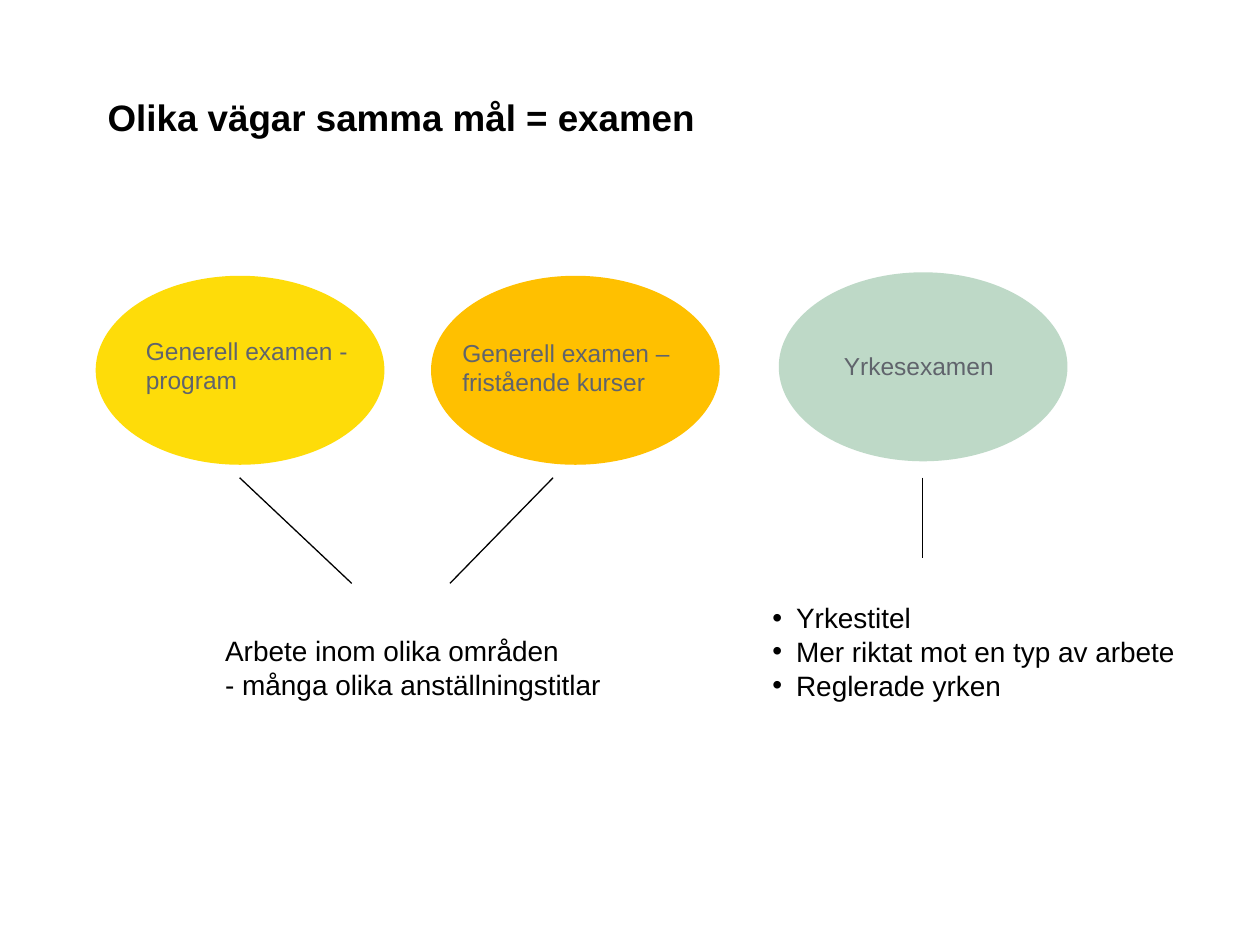
from lxml.etree import SubElement
from pptx import Presentation
from pptx.dml.color import RGBColor
from pptx.enum.shapes import MSO_CONNECTOR, MSO_SHAPE
from pptx.enum.text import MSO_ANCHOR, MSO_AUTO_SIZE, PP_ALIGN
from pptx.oxml.ns import qn
from pptx.util import Cm, Pt

BLACK = RGBColor(0x00, 0x00, 0x00)
GREY = RGBColor(0x60, 0x64, 0x6C)
YELLOW = RGBColor(0xFE, 0xDC, 0x09)
AMBER = RGBColor(0xFF, 0xC0, 0x00)
GREEN = RGBColor(0xBE, 0xD9, 0xC7)

OVAL_W, OVAL_H = 5.82, 3.81
LABEL_W = 5.05
LINE_TOP = 9.63


class Page:
    font = "Arial"
    indent = 0.48

    def __init__(self, slide):
        self.slide = slide

    def fill_in(self, para, text, size, color, bold=False):
        """Add one run per line of text, with line breaks between."""
        for i, line in enumerate(text.split("\n")):
            if i:
                para.add_line_break()
            run = para.add_run()
            run.text = line
            run.font.name = self.font
            run.font.size = Pt(size)
            run.font.bold = bold
            run.font.color.rgb = color

    def title(self, text, x, y, w, h):
        shape = self.slide.shapes.title
        shape.left, shape.top, shape.width, shape.height = map(Cm, (x, y, w, h))
        frame = shape.text_frame
        frame.auto_size = MSO_AUTO_SIZE.NONE
        frame.vertical_anchor = MSO_ANCHOR.MIDDLE
        frame.margin_left = Cm(0.24)
        frame.margin_right = frame.margin_top = frame.margin_bottom = 0
        para = frame.paragraphs[0]
        para.alignment = PP_ALIGN.LEFT
        self.fill_in(para, text, 21, BLACK, bold=True)

    def oval(self, x, y, fill):
        shape = self.slide.shapes.add_shape(
            MSO_SHAPE.OVAL, Cm(x), Cm(y), Cm(OVAL_W), Cm(OVAL_H))
        shape.shadow.inherit = False
        shape.fill.solid()
        shape.fill.fore_color.rgb = fill
        shape.line.fill.background()

    def text(self, paras, x, y, w, h, size, color, bullet=False):
        box = self.slide.shapes.add_textbox(Cm(x), Cm(y), Cm(w), Cm(h))
        frame = box.text_frame
        frame.word_wrap = True
        for i, text in enumerate(paras):
            para = frame.add_paragraph() if i else frame.paragraphs[0]
            if bullet:
                self.bullet(para)
            self.fill_in(para, text, size, color)

    def bullet(self, para):
        props = para._p.get_or_add_pPr()
        props.set("marL", str(Cm(self.indent)))
        props.set("indent", str(-Cm(self.indent)))
        SubElement(props, qn("a:buFont")).set("typeface", self.font)
        SubElement(props, qn("a:buChar")).set("char", "•")

    def line(self, x1, y1, x2, y2):
        line = self.slide.shapes.add_connector(
            MSO_CONNECTOR.STRAIGHT, Cm(x1), Cm(y1), Cm(x2), Cm(y2))
        line.line.color.rgb = BLACK
        line.line.width = Pt(0.75)
        SubElement(line._element.spPr, qn("a:effectLst"))


def main():
    deck = Presentation()
    deck.slide_width, deck.slide_height = Cm(25.4), Cm(19.05)
    page = Page(deck.slides.add_slide(deck.slide_layouts[5]))

    page.title("Olika vägar samma mål = examen", 1.93, 0.76, 22.86, 3.18)

    # Oval left, top and fill; label text, left, top and height
    routes = [
        (1.93, 5.56, YELLOW, "Generell examen - program", 2.69, 6.65, 1.45),
        (8.69, 5.56, AMBER, "Generell examen – fristående kurser", 9.07, 6.68, 1.45),
        (15.7, 5.49, GREEN, "Yrkesexamen", 16.76, 6.96, 0.86),
    ]
    for x, y, fill, label, left, top, high in routes:
        page.oval(x, y, fill)
        page.text([label], left, top, LABEL_W, high, 14, GREY)

    for x1, x2, y2 in [(18.59, 18.59, 11.25), (11.15, 9.07, 11.76),
                       (4.83, 7.09, 11.76)]:
        page.line(x1, LINE_TOP, x2, y2)

    page.text(["Yrkestitel", "Mer riktat mot en typ av arbete", "Reglerade yrken"],
              15.32, 11.99, 9.47, 3.43, 16, BLACK, bullet=True)
    page.text(["Arbete inom olika områden \n- många olika anställningstitlar"],
              4.29, 12.65, 8.94, 2.13, 16, BLACK)

    deck.save("out.pptx")


if __name__ == "__main__":
    main()
